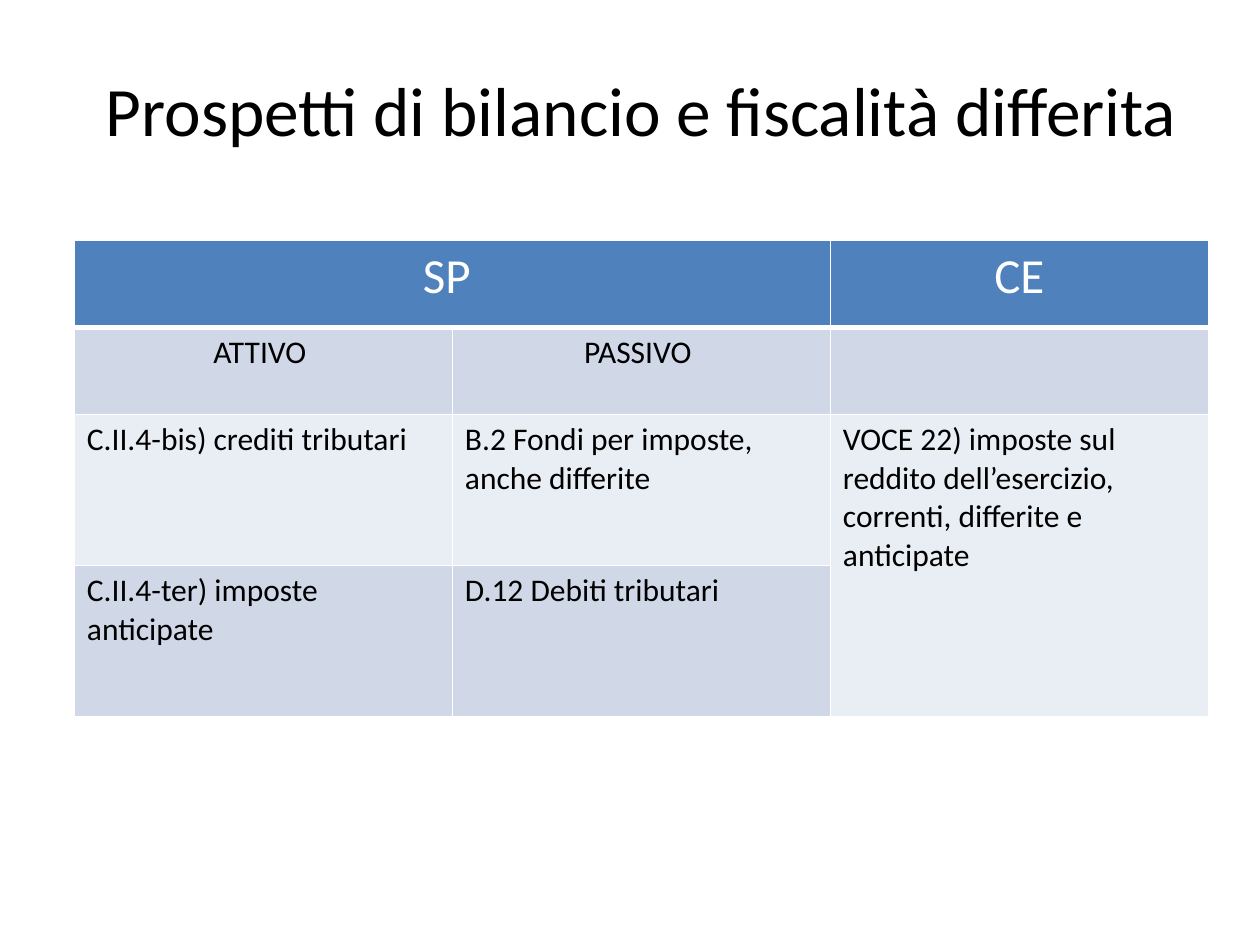
from dataclasses import dataclass

from lxml import etree
from pptx import Presentation
from pptx.dml.color import RGBColor
from pptx.enum.text import MSO_ANCHOR, PP_ALIGN
from pptx.oxml.ns import qn
from pptx.util import Inches, Pt

LEFT, CENTER = PP_ALIGN.LEFT, PP_ALIGN.CENTER
MIDDLE = MSO_ANCHOR.MIDDLE
FONT = "Calibri"
COLORS = {
    "white": "FFFFFF",
    "black": "000000",
    "header": "4F81BD",
    "dark_band": "D0D8E8",
    "light_band": "E9EDF4",
}
SLIDE_LEFT, CONTENT_WIDTH = 0.59, 9


@dataclass
class TableRow:
    texts: tuple[str, ...]
    height: float
    fill: str
    size: float = 18
    color: str = "black"
    align: PP_ALIGN = LEFT
    bottom_border: float = 1


ROWS = [
    TableRow(("SP ", "", "CE"), 0.69, "header", 28, "white", CENTER, 3),
    TableRow(("ATTIVO ", "PASSIVO ", ""), 0.69, "dark_band", align=CENTER),
    TableRow(
        (
            "C.II.4-bis) crediti tributari",
            "B.2 Fondi per imposte, anche differite",
            "VOCE 22) imposte sul reddito dell’esercizio, correnti, differite e anticipate",
        ),
        1.2,
        "light_band",
    ),
    TableRow(
        ("C.II.4-ter) imposte anticipate", "D.12 Debiti tributari", ""), 1.2, "dark_band"
    ),
]
# First and last (row, column) of each merged area
MERGES = [((0, 0), (0, 1)), ((2, 2), (3, 2))]


def write_text(text_frame, text: str, *, size: float, color: str, align: PP_ALIGN) -> None:
    text_frame.word_wrap = True
    paragraph = text_frame.paragraphs[0]
    paragraph.text = text
    paragraph.alignment = align
    font = paragraph.font
    font.name, font.size, font.bold = FONT, Pt(size), False
    font.color.rgb = RGBColor.from_string(COLORS[color])
    for run in paragraph.runs:
        run.font.name, run.font.size, run.font.bold = FONT, Pt(size), False
        run.font.color.rgb = RGBColor.from_string(COLORS[color])


def set_borders(cell, top: float, bottom: float) -> None:
    """Draw white cell borders; widths are in points."""
    properties = cell._tc.get_or_add_tcPr()
    for side, width in (("L", 1), ("R", 1), ("T", top), ("B", bottom)):
        line = etree.SubElement(properties, qn(f"a:ln{side}"), w=str(Pt(width)))
        fill = etree.SubElement(line, qn("a:solidFill"))
        etree.SubElement(fill, qn("a:srgbClr"), val=COLORS["white"])


def add_title(slide, text: str) -> None:
    title = slide.shapes.add_textbox(
        Inches(SLIDE_LEFT), Inches(0.45), Inches(CONTENT_WIDTH), Inches(0.82)
    )
    title.fill.solid()
    title.fill.fore_color.rgb = RGBColor.from_string(COLORS["white"])
    title.text_frame.vertical_anchor = MIDDLE
    write_text(title.text_frame, text, size=39.6, color="black", align=CENTER)


def add_balance_table(slide, rows: list[TableRow]) -> None:
    column_count = len(rows[0].texts)
    table = slide.shapes.add_table(
        len(rows),
        column_count,
        Inches(SLIDE_LEFT),
        Inches(1.91),
        Inches(CONTENT_WIDTH),
        Inches(sum(row.height for row in rows)),
    ).table
    for column in table.columns:
        column.width = Inches(CONTENT_WIDTH / column_count)
    top_border = 1
    for row_index, row in enumerate(rows):
        table.rows[row_index].height = Inches(row.height)
        for column_index, text in enumerate(row.texts):
            cell = table.cell(row_index, column_index)
            write_text(
                cell.text_frame, text, size=row.size, color=row.color, align=row.align
            )
            set_borders(cell, top_border, row.bottom_border)
            cell.fill.solid()
            cell.fill.fore_color.rgb = RGBColor.from_string(COLORS[row.fill])
        top_border = row.bottom_border
    for first, last in MERGES:
        table.cell(*first).merge(table.cell(*last))


def main() -> None:
    presentation = Presentation()
    presentation.slide_width, presentation.slide_height = Inches(10), Inches(7.5)
    slide = presentation.slides.add_slide(presentation.slide_layouts[6])
    add_title(slide, "Prospetti di bilancio e fiscalità differita")
    add_balance_table(slide, ROWS)
    presentation.save("out.pptx")


if __name__ == "__main__":
    main()
